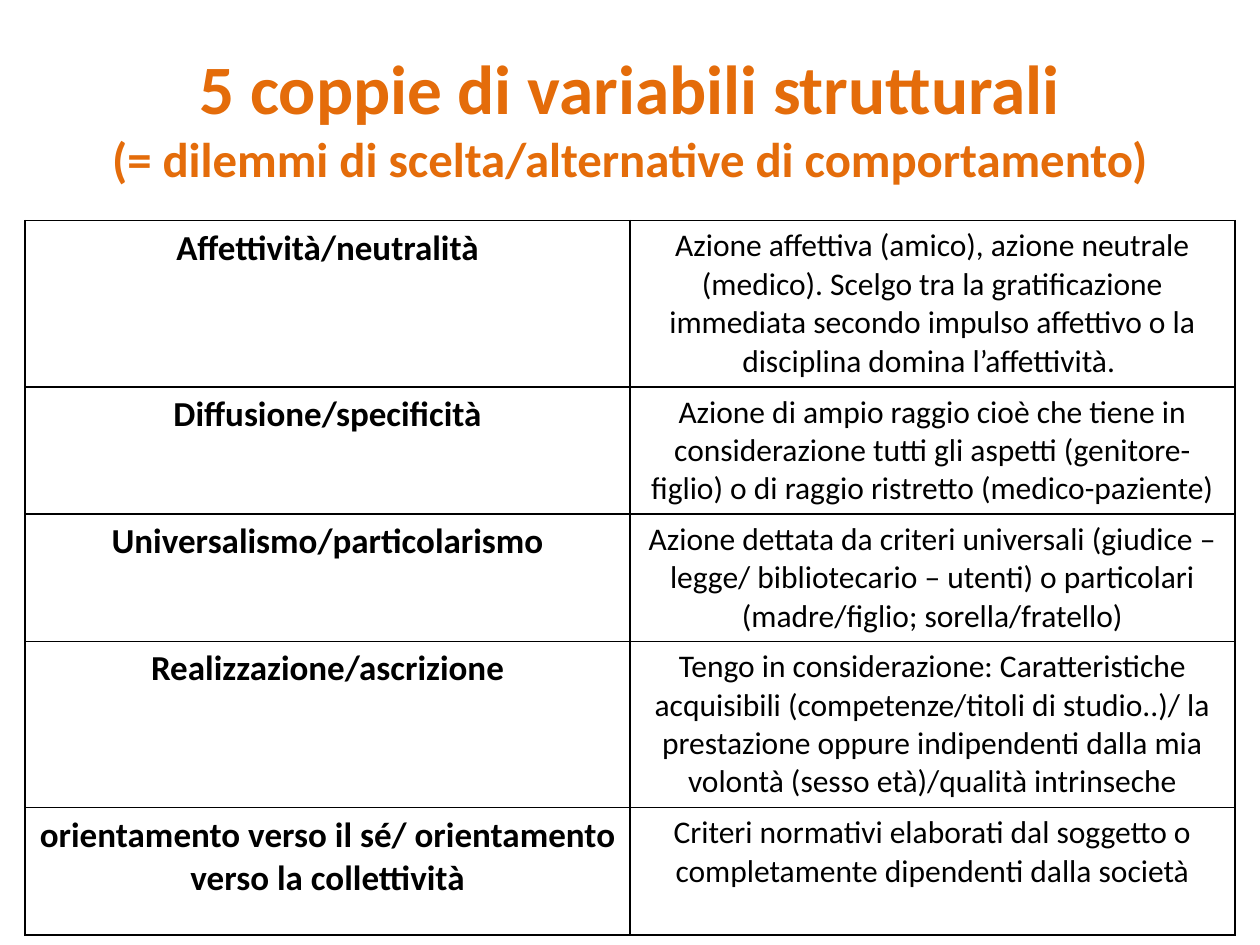
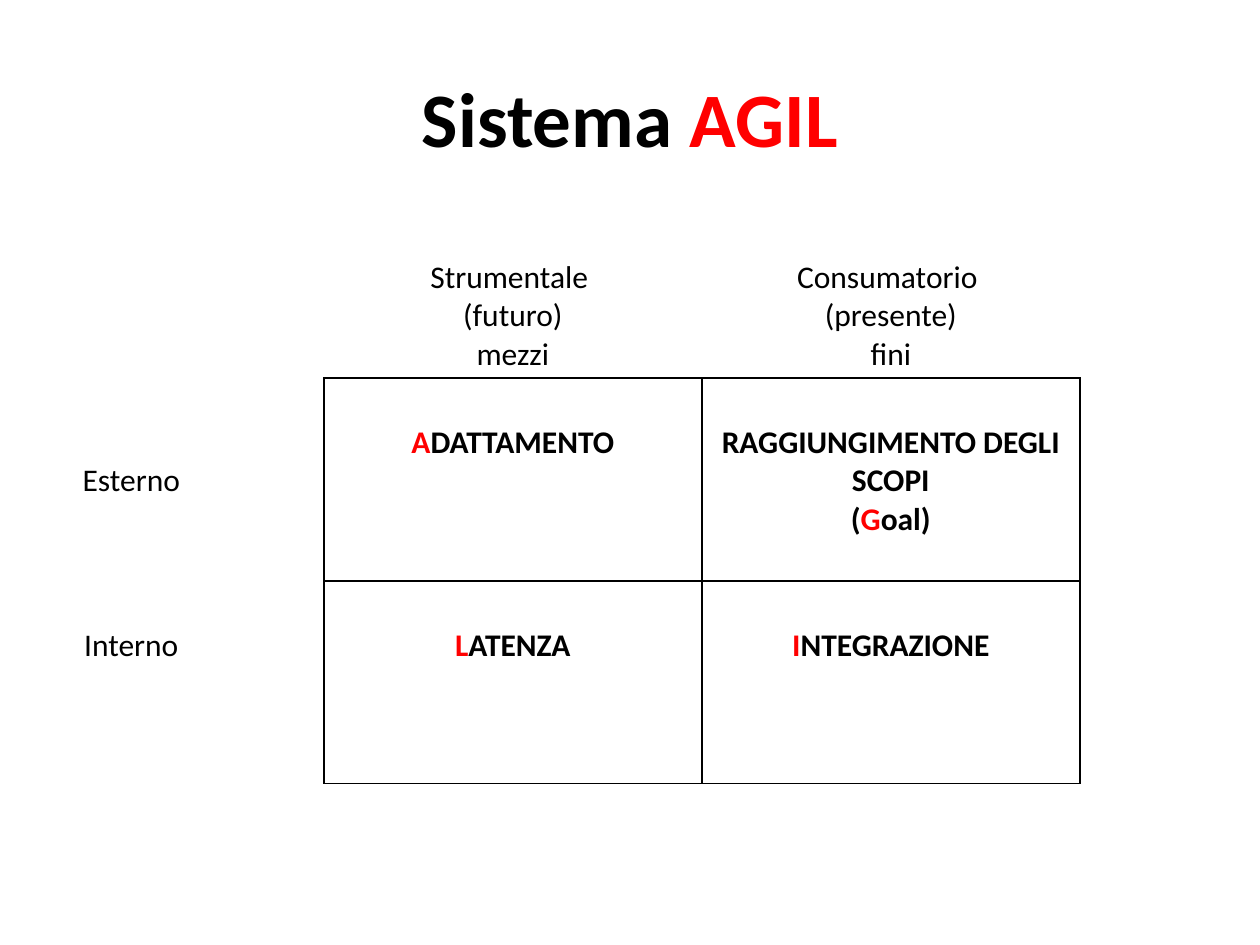
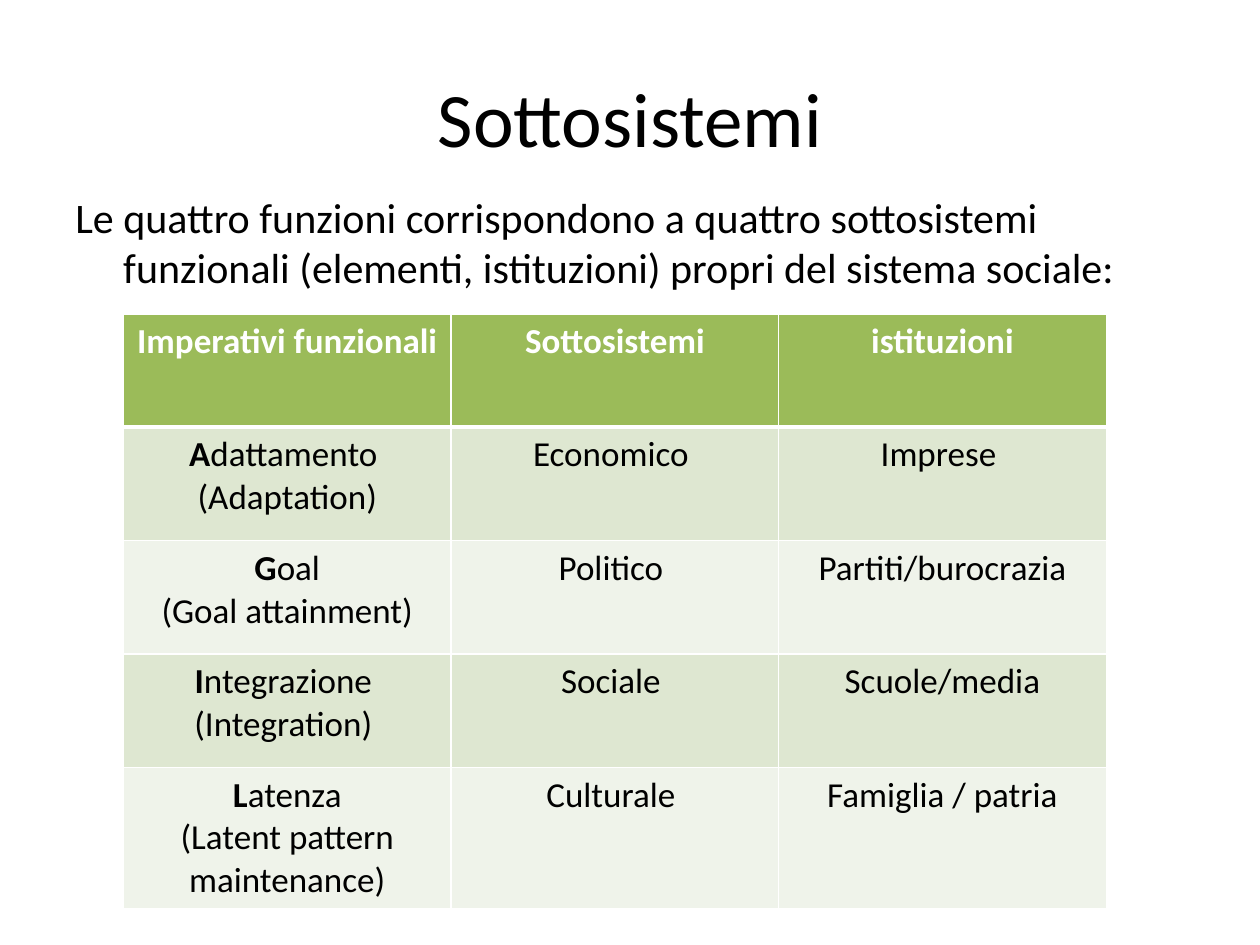
from lxml import etree
from pptx import Presentation
from pptx.dml.color import RGBColor
from pptx.enum.text import MSO_ANCHOR, PP_ALIGN
from pptx.oxml.ns import qn
from pptx.util import Inches, Pt

BLACK = RGBColor(0x00, 0x00, 0x00)
WHITE = RGBColor(0xFF, 0xFF, 0xFF)
ORANGE = RGBColor(0xE4, 0x6C, 0x0A)
RED = RGBColor(0xFF, 0x00, 0x00)
GREEN = RGBColor(0x9B, 0xBB, 0x59)
BANDS = [RGBColor(0xEF, 0xF3, 0xEA), RGBColor(0xDE, 0xE7, 0xD1)]
FONT = "Calibri"
SIDES = "LRTB"


class Deck:
    def __init__(self):
        self.prs = Presentation()
        self.prs.slide_width, self.prs.slide_height = Inches(10), Inches(7.5)
        self.s = None

    def slide(self):
        self.s = self.prs.slides.add_slide(self.prs.slide_layouts[6])

    def fill_text(self, tf, lines, size, color=BLACK, bold=False,
                  align=PP_ALIGN.CENTER, mark_color=None):
        """Text between asterisks is bold and takes mark_color."""
        for i, line in enumerate(lines):
            p = tf.add_paragraph() if i else tf.paragraphs[0]
            p.alignment = align
            parts = line.split("*")
            if len(parts) == 1:
                p.text = line
            else:
                for part in parts:
                    p.add_run().text = part
            for j, r in enumerate(p.runs):
                marked = len(parts) > 1 and j % 2 == 1
                r.font.name, r.font.size = FONT, Pt(size)
                r.font.bold = bold or marked
                r.font.color.rgb = mark_color if marked and mark_color else color
            for r in [r for r in p.runs if not r.text]:
                p._p.remove(r._r)

    def text(self, x, y, w, h, lines, size, anchor=MSO_ANCHOR.TOP, **style):
        tf = self.s.shapes.add_textbox(Inches(x), Inches(y), Inches(w), Inches(h)).text_frame
        tf.word_wrap = True
        tf.vertical_anchor = anchor
        self.fill_text(tf, lines, size, **style)
        return tf.paragraphs[0]

    def title(self, line, size=44, **style):
        return self.text(0.5, 0.3, 9, 1.25, [line], size, MSO_ANCHOR.MIDDLE, **style)

    def table(self, x, y, col_width, cols, heights):
        table = self.s.shapes.add_table(
            len(heights), cols, Inches(x), Inches(y),
            Inches(col_width * cols), Inches(sum(heights))).table
        table.first_row = table.horz_banding = False
        for col in table.columns:
            col.width = Inches(col_width)
        for row, height in zip(table.rows, heights):
            row.height = Inches(height)
        return table

    def cell(self, cell, lines, size, fill=None, borders=SIDES, line=BLACK,
             thick="", top=0.05, **style):
        for side in SIDES:
            ln = etree.SubElement(cell._tc.get_or_add_tcPr(), qn("a:ln" + side))
            ln.set("w", str(Pt(3 if side in thick else 1)))
            if side in borders:
                solid = etree.SubElement(ln, qn("a:solidFill"))
                etree.SubElement(solid, qn("a:srgbClr")).set("val", str(line))
            else:
                etree.SubElement(ln, qn("a:noFill"))
        if fill is None:
            cell.fill.background()
        else:
            cell.fill.solid()
            cell.fill.fore_color.rgb = fill
        cell.margin_top = Inches(top)
        self.fill_text(cell.text_frame, lines, size, **style)


def variables_slide(deck):
    deck.slide()
    p = deck.title("5 coppie di variabili strutturali\v"
                   "(= dilemmi di scelta/alternative di comportamento)",
                   39.6, color=ORANGE, bold=True)
    p.runs[1].font.size = Pt(27.9)
    rows = [
        ("Affettività/neutralità",
         "Azione affettiva (amico), azione neutrale (medico). Scelgo tra la gratificazione "
         "immediata secondo impulso affettivo o la disciplina domina l’affettività. "),
        ("Diffusione/specificità",
         "Azione di ampio raggio cioè che tiene in considerazione tutti gli aspetti "
         "(genitore-figlio) o di raggio ristretto (medico-paziente)"),
        ("Universalismo/particolarismo",
         "Azione dettata da criteri universali (giudice – legge/ bibliotecario – utenti) "
         "o particolari (madre/figlio; sorella/fratello)"),
        ("Realizzazione/ascrizione",
         "Tengo in considerazione: Caratteristiche acquisibili (competenze/titoli di "
         "studio..)/ la prestazione oppure indipendenti dalla mia volontà (sesso "
         "età)/qualità intrinseche"),
        ("orientamento verso il sé/ orientamento verso la collettività",
         "Criteri normativi elaborati dal soggetto o completamente dipendenti dalla società"),
    ]
    table = deck.table(0.2, 1.75, 4.8, 2, [1.32, 1.01, 1.01, 1.32, 1.01])
    for i, (pair, meaning) in enumerate(rows):
        deck.cell(table.cell(i, 0), [pair], 20, bold=True)
        deck.cell(table.cell(i, 1), [meaning], 18)


def agil_slide(deck):
    deck.slide()
    deck.title("Sistema *AGIL*", bold=True, mark_color=RED)
    one_line, two_lines = 0.36, 0.66
    table = deck.table(-0.43, 1.39, 3, 3, [1.61] * 3)
    deck.cell(table.cell(0, 0), [], 18, borders="")
    headings = [["Strumentale ", "(futuro)", "mezzi"],
                ["Consumatorio ", "(presente)", "fini"]]
    for j, lines in enumerate(headings, 1):
        deck.cell(table.cell(0, j), lines, 18, borders="B", top=two_lines)
    for i, (label, top) in enumerate([("Esterno ", two_lines), ("Interno ", one_line)], 1):
        deck.cell(table.cell(i, 0), [label], 18, borders="R", top=top)
    functions = [[["*A*DATTAMENTO"], ["RAGGIUNGIMENTO DEGLI SCOPI", "(*G*oal)"]],
                 [["*L*ATENZA"], ["*I*NTEGRAZIONE"]]]
    for i, row in enumerate(functions, 1):
        for j, lines in enumerate(row, 1):
            deck.cell(table.cell(i, j), lines, 18, top=one_line, bold=True, mark_color=RED)


def subsystems_slide(deck):
    deck.slide()
    deck.title("Sottosistemi")
    p = deck.text(0.5, 1.47, 9, 0.95,
                  ["Le quattro funzioni corrispondono a quattro sottosistemi funzionali "
                   "(elementi, istituzioni) propri del sistema sociale:"],
                  24, align=PP_ALIGN.LEFT)
    pPr = p._p.get_or_add_pPr()
    pPr.set("marL", str(Inches(0.38)))
    pPr.set("indent", str(Inches(-0.38)))
    rows = [
        (["Imperativi funzionali"], ["Sottosistemi"], ["istituzioni"]),
        (["*A*dattamento ", "(Adaptation)"], ["Economico "], ["Imprese "]),
        (["*G*oal", "(Goal attainment)"], ["Politico "], ["Partiti/burocrazia"]),
        (["*I*ntegrazione ", "(Integration) "], ["Sociale "], ["Scuole/media"]),
        (["*L*atenza", "(Latent pattern maintenance)"], ["Culturale "], ["Famiglia / patria"]),
    ]
    table = deck.table(0.98, 2.49, 2.6, 3, [0.9] * 4 + [1.12])
    for i, row in enumerate(rows):
        header = i == 0
        for j, lines in enumerate(row):
            deck.cell(table.cell(i, j), lines, 20, line=WHITE,
                      fill=GREEN if header else BANDS[i % 2],
                      thick={0: "B", 1: "T"}.get(i, ""),
                      color=WHITE if header else BLACK, bold=header)


def main():
    deck = Deck()
    variables_slide(deck)
    agil_slide(deck)
    subsystems_slide(deck)
    deck.prs.save("out.pptx")


if __name__ == "__main__":
    main()
